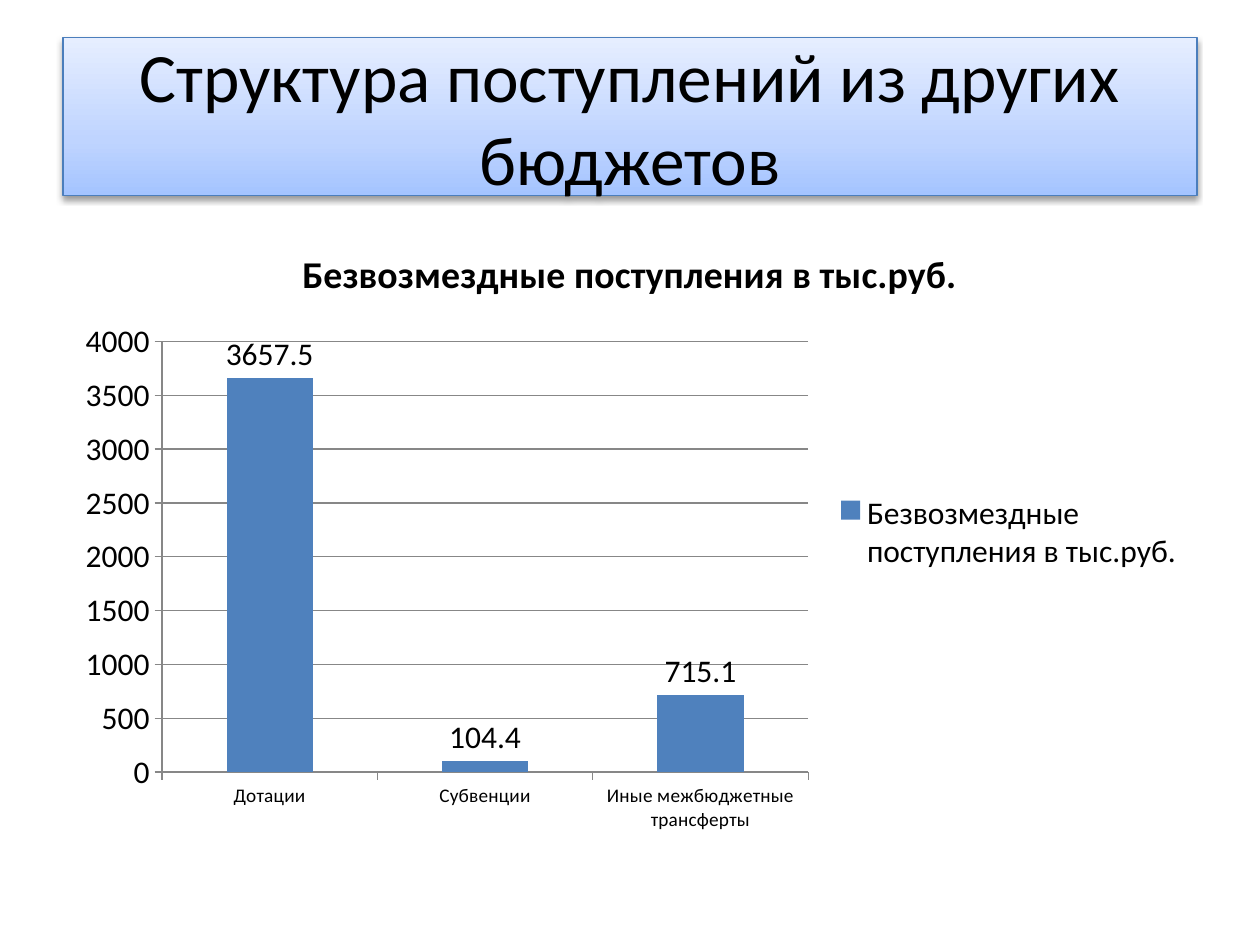
"""Build a slide with a column chart of transfers from other budgets."""
import copy

import lxml.etree
import pptx
import pptx.chart.data
import pptx.dml.color
import pptx.enum.chart
import pptx.enum.shapes
import pptx.enum.text
import pptx.oxml.ns
import pptx.util

Cm, Pt = pptx.util.Cm, pptx.util.Pt
qn = pptx.oxml.ns.qn
COLORS = {"text": "000000", "bar": "4F81BD", "border": "4B7EBC", "axis": "878787",
          "bottom": "A4C4FF", "middle": "BFD4FF", "top": "E6EEFF"}
FONT = "Calibri"
SERIES = "Безвозмездные поступления в тыс.руб."
TRANSFERS = {"Дотации": 3657.5, "Субвенции": 104.4, "Иные межбюджетные трансферты": 715.1}


def rgb(name):
    return pptx.dml.color.RGBColor.from_string(COLORS[name])


def write(tf, text, size, bold=False, align=pptx.enum.text.PP_ALIGN.CENTER):
    p = tf.paragraphs[0]
    p.alignment = align
    r = p.add_run()
    r.text = text
    r.font.name, r.font.size, r.font.bold = FONT, Pt(size), bold
    r.font.color.rgb = rgb("text")


prs = pptx.Presentation()
prs.slide_width, prs.slide_height = Cm(25.4), Cm(19.05)
s = prs.slides.add_slide(prs.slide_layouts[6])

sp = s.shapes.add_shape(pptx.enum.shapes.MSO_SHAPE.RECTANGLE, Cm(1.27), Cm(0.76), Cm(22.86), Cm(3.18))
sp.line.color.rgb = rgb("border")
sp.line.width = Pt(0.75)
sp.fill.gradient()
sp.fill.gradient_angle = 90
stop_list = next(sp._element.spPr.iter(qn("a:gsLst")))
stop_list.insert(1, copy.deepcopy(stop_list[0]))
for stop, (position, name) in zip(sp.fill.gradient_stops, [(0, "bottom"), (0.35, "middle"), (1, "top")]):
    stop.position = position
    stop.color.rgb = rgb(name)

sp.shadow.inherit = False
effects = sp._element.spPr.find(qn("a:effectLst"))
shadow = lxml.etree.SubElement(effects, qn("a:outerShdw"), blurRad=str(Pt(3.1)), dist=str(Pt(1.6)),
                               dir="5400000", rotWithShape="0")
color = lxml.etree.SubElement(shadow, qn("a:srgbClr"), val=COLORS["text"])
lxml.etree.SubElement(color, qn("a:alpha"), val="38000")

tf = sp.text_frame
tf.word_wrap = True
tf.vertical_anchor = pptx.enum.text.MSO_ANCHOR.MIDDLE
write(tf, "Структура поступлений из других бюджетов", size=39.6)

data = pptx.chart.data.CategoryChartData()
data.categories = list(TRANSFERS)
data.add_series(SERIES, list(TRANSFERS.values()))
chart = s.shapes.add_chart(pptx.enum.chart.XL_CHART_TYPE.COLUMN_CLUSTERED,
                           Cm(1.27), Cm(4.45), Cm(22.86), Cm(12.57), data).chart
chart.font.name, chart.font.size = FONT, Pt(18)
chart.font.color.rgb = rgb("text")
chart.has_title = True
write(chart.chart_title.text_frame, SERIES, size=21.6, bold=True)
chart.chart_title.include_in_layout = False
chart.has_legend = True
chart.legend.position = pptx.enum.chart.XL_LEGEND_POSITION.RIGHT
chart.legend.include_in_layout = False

plot = chart.plots[0]
plot.gap_width = 150
plot.vary_by_categories = False
plot.has_data_labels = True
plot.data_labels.show_value = True
plot.data_labels.position = pptx.enum.chart.XL_LABEL_POSITION.OUTSIDE_END
bars = plot.series[0].format.fill
bars.solid()
bars.fore_color.rgb = rgb("bar")

chart.value_axis.has_major_gridlines = True
chart.category_axis.tick_labels.font.size = Pt(11)
for axis in (chart.category_axis, chart.value_axis):
    axis.major_tick_mark = pptx.enum.chart.XL_TICK_MARK.OUTSIDE
for part in (chart.category_axis, chart.value_axis, chart.value_axis.major_gridlines):
    part.format.line.color.rgb = rgb("axis")
    part.format.line.width = Pt(0.75)

prs.save("out.pptx")
